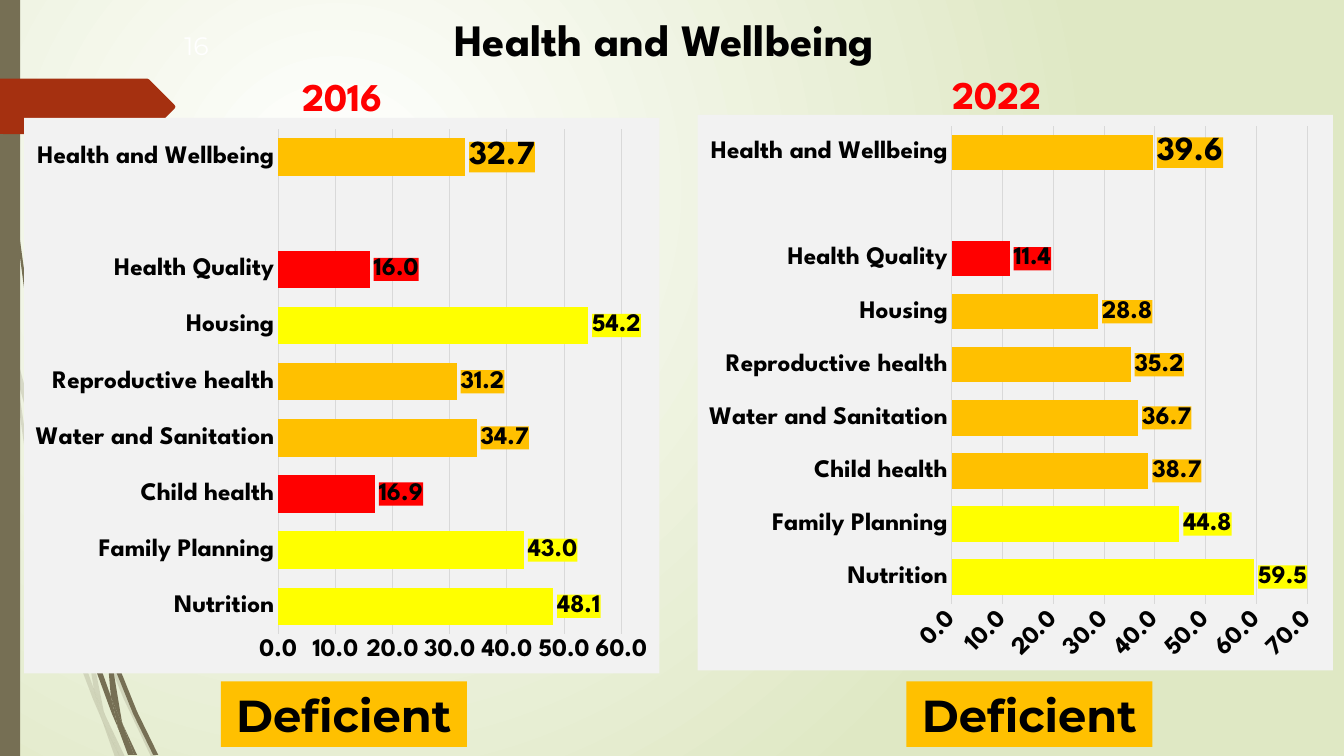
from dataclasses import dataclass

from lxml.etree import SubElement
from pptx import Presentation
from pptx.chart.data import CategoryChartData
from pptx.dml.color import RGBColor
from pptx.enum.chart import XL_CHART_TYPE, XL_LABEL_POSITION, XL_TICK_MARK
from pptx.enum.dml import MSO_FILL
from pptx.enum.shapes import MSO_SHAPE
from pptx.enum.text import MSO_ANCHOR, MSO_AUTO_SIZE, PP_ALIGN
from pptx.oxml import parse_xml
from pptx.oxml.ns import nsdecls, qn
from pptx.util import Inches, Pt


@dataclass(frozen=True)
class Theme:
    black: str = "000000"
    white: str = "FFFFFF"
    back: str = "DFE8C4"
    olive: str = "766F54"
    rust: str = "A53010"
    red: str = "FF0000"
    orange: str = "FFC000"
    yellow: str = "FFFF00"
    panel: str = "F2F2F2"
    grid: str = "D9D9D9"
    font: str = "League Spartan"
    verdict_font: str = "Montserrat"
    title: int = 32
    year: int = 28
    total: int = 24
    label: int = 18


@dataclass(frozen=True)
class Panel:
    year: str
    year_box: tuple
    left: float
    top: float
    verdict_left: float
    values: tuple
    axis_max: int
    plot: tuple  # x, y, width, height as shares of the chart
    rotation: int


T = Theme()
CATEGORIES = ("Nutrition", "Family Planning", "Child health", "Water and Sanitation",
              "Reproductive health", "Housing", "Health Quality", "", "Health and Wellbeing")
PANELS = (
    Panel("2016", (2.16, 0.68, 2.47, 0.54), 0.24, 1.17, 2.19,
          (48.1, 43.0, 16.9, 34.7, 31.2, 54.2, 16.0, None, 32.7),
          60, (0.4, 0.02, 0.54, 0.91), 0),
    Panel("2022", (8.81, 0.66, 2.16, 0.54), 6.92, 1.14, 8.99,
          (59.5, 44.8, 38.7, 36.7, 35.2, 28.8, 11.4, None, 39.6),
          70, (0.4, 0.02, 0.56, 0.86), -45),
)

# Outlines in hundredths of an inch
PALE_WISPS = (
    ((11, 350), (9, 322), (0, 282), (0, 299), (10, 344)),
    ((58, 522), (84, 599), (85, 586), (62, 520), (14, 345), (17, 376)),
    ((92, 607), (88, 596), (88, 610), (123, 694), (150, 751), (155, 751), (127, 692)),
    ((119, 751), (124, 751), (105, 711)),
    ((93, 683), (70, 619), (31, 469), (17, 376), (11, 350), (28, 470), (65, 621),
     (92, 693), (101, 714), (99, 707)),
    ((84, 599), (87, 646), (93, 683), (96, 692), (105, 711), (103, 706), (91, 646), (88, 608)),
    ((101, 714), (114, 751), (119, 751)),
    ((96, 692), (93, 683), (99, 707), (101, 714), (119, 751), (105, 711)),
)
DARK_WISPS = (
    ((7, 110), (17, 233), (33, 355), (56, 477), (57, 481), (55, 453), (36, 355),
     (19, 232), (8, 109), (4, 0), (3, 0), (4, 48)),
    ((113, 649), (110, 641), (111, 656), (132, 708), (152, 749), (157, 749), (136, 706)),
    ((110, 691), (98, 657), (72, 556), (64, 505), (57, 477), (68, 557), (93, 659),
     (111, 708), (117, 722), (116, 717)),
    ((133, 749), (136, 749), (122, 719)),
    ((117, 722), (127, 749), (131, 749)),
    ((106, 645), (110, 691), (116, 706), (122, 719), (121, 716), (111, 656), (109, 651)),
    ((116, 706), (110, 691), (116, 717), (117, 722), (130, 749), (133, 749), (122, 719)),
)
ARROW = ((0, 78), (146, 78), (148, 79), (173, 104), (174, 106), (173, 108),
         (148, 133), (146, 134), (0, 133))


def rgb(color: str) -> RGBColor:
    return RGBColor.from_string(color)


def solid_xml(tag: str, color: str):
    return parse_xml(f'<{tag} {nsdecls("c", "a")}><a:solidFill><a:srgbClr val="{color}"/>'
                     f'</a:solidFill><a:ln><a:noFill/></a:ln></{tag}>')


def style_font(font, size: int, color: str = T.black, name: str = T.font, bold: bool = True) -> None:
    font.size, font.name, font.bold = Pt(size), name, bold
    font.color.rgb = rgb(color)


def paint(sp, color: str) -> None:
    sp.shadow.inherit = False
    sp.fill.solid()
    sp.fill.fore_color.rgb = rgb(color)
    sp.line.fill.background()


def write(sp, text: str, size: int, **font) -> None:
    tf = sp.text_frame
    tf.text = text
    tf.word_wrap, tf.auto_size = True, MSO_AUTO_SIZE.NONE
    tf.vertical_anchor = MSO_ANCHOR.MIDDLE
    p = tf.paragraphs[0]
    p.alignment = PP_ALIGN.CENTER
    style_font(p.font, size, **font)


def add_outline(s, points: tuple, color: str, opacity: int = 100) -> None:
    builder = s.shapes.build_freeform(*points[0], scale=Inches(0.01))
    builder.add_line_segments(points[1:], close=True)
    sp = builder.convert_to_shape()
    paint(sp, color)
    if opacity < 100:
        clr = next(sp._element.spPr.iter(qn("a:srgbClr")))
        SubElement(clr, qn("a:alpha"), val=str(opacity * 1000))


def add_backdrop(s) -> None:
    fill = s.background.fill
    fill.gradient()
    for stop, color in zip(fill.gradient_stops, (T.white, T.back)):
        stop.color.rgb = rgb(color)
    lin = next(s._element.iter(qn("a:lin")))
    lin.getparent().replace(lin, parse_xml(
        f'<a:path {nsdecls("a")} path="circle">'
        '<a:fillToRect l="50000" t="50000" r="100000" b="100000"/></a:path>'))
    for wisp in PALE_WISPS:
        add_outline(s, wisp, T.olive, 20)
    for wisp in DARK_WISPS:
        add_outline(s, wisp, T.olive)
    paint(s.shapes.add_shape(MSO_SHAPE.RECTANGLE, 0, 0, Inches(0.2), Inches(7.5)), T.olive)
    add_outline(s, ARROW, T.rust)


def score_color(value: float) -> str:
    return T.red if value < 20 else T.orange if value < 40 else T.yellow


def style_axes(chart, panel: Panel) -> None:
    for axis in (chart.category_axis, chart.value_axis):
        axis.major_tick_mark = axis.minor_tick_mark = XL_TICK_MARK.NONE
        axis.format.line.fill.background()
        style_font(axis.tick_labels.font, T.label)
    chart.category_axis.has_major_gridlines = False
    axis = chart.value_axis
    axis.minimum_scale, axis.maximum_scale, axis.major_unit = 0, panel.axis_max, 10
    axis.tick_labels.number_format = "0.0"
    axis.tick_labels.number_format_is_linked = False
    line = axis.major_gridlines.format.line
    line.color.rgb, line.width = rgb(T.grid), Pt(0.75)
    next(axis._element.iter(qn("a:bodyPr"))).set("rot", str(panel.rotation * 60000))


def style_bars(series, values: tuple) -> None:
    """Colour each bar and the box behind its label by score."""
    for i, value in enumerate(values):
        if value is None:
            continue
        point, color = series.points[i], score_color(value)
        point.format.fill.solid()
        point.format.fill.fore_color.rgb = rgb(color)
        label = point.data_label
        style_font(label.font, T.total if i == len(values) - 1 else T.label)
        label.position = XL_LABEL_POSITION.OUTSIDE_END
    for label in series._element.iter(qn("c:dLbl")):
        value = values[int(label.find(qn("c:idx")).get("val"))]
        text = label.find(qn("c:txPr"))
        text.addprevious(parse_xml(
            f'<c:numFmt {nsdecls("c")} formatCode="0.0" sourceLinked="0"/>'))
        text.addprevious(solid_xml("c:spPr", score_color(value)))


def place_plot(chart, shares: tuple) -> None:
    area = chart._chartSpace.chart.plotArea
    for old in area.findall(qn("c:layout")):
        area.remove(old)
    sizes = "".join(f'<c:{k} val="{v}"/>' for k, v in zip("xywh", shares))
    area.insert(0, parse_xml(
        f'<c:layout {nsdecls("c")}><c:manualLayout><c:layoutTarget val="inner"/>'
        f'<c:xMode val="edge"/><c:yMode val="edge"/>{sizes}</c:manualLayout></c:layout>'))


def add_panel(s, panel: Panel) -> None:
    write(s.shapes.add_textbox(*map(Inches, panel.year_box)), panel.year, T.year, color=T.red)
    data = CategoryChartData(number_format="0.0")
    data.categories = CATEGORIES
    data.add_series("Series 1", panel.values)
    chart = s.shapes.add_chart(XL_CHART_TYPE.BAR_CLUSTERED, Inches(panel.left), Inches(panel.top),
                               Inches(6.3), Inches(5.51), data).chart
    chart.has_legend = chart.has_title = False
    style_font(chart.font, T.label)
    plot = chart.plots[0]
    plot.gap_width, plot.vary_by_categories = 50, False
    style_axes(chart, panel)
    style_bars(plot.series[0], panel.values)
    place_plot(chart, panel.plot)
    chart._chartSpace.chart.addnext(solid_xml("c:spPr", T.panel))
    verdict = s.shapes.add_shape(MSO_SHAPE.RECTANGLE, Inches(panel.verdict_left), Inches(6.76),
                                 Inches(2.44), Inches(0.65))
    paint(verdict, T.orange)
    write(verdict, "Deficient", T.title, name=T.verdict_font)


def main() -> None:
    prs = Presentation()
    prs.slide_width, prs.slide_height = Inches(13.33), Inches(7.5)
    s = prs.slides.add_slide(prs.slide_layouts[5])
    add_backdrop(s)
    title = s.shapes.title
    title.left, title.top, title.width, title.height = map(Inches, (3.79, 0, 5.6, 0.67 + 0.1))
    write(title, "Health and Wellbeing", T.title)
    number = s.shapes.add_textbox(Inches(1.55), Inches(0.25), Inches(0.8), Inches(0.4))
    write(number, "16", T.label, color=T.white, name=T.verdict_font, bold=False)
    for panel in PANELS:
        add_panel(s, panel)
    prs.save("out.pptx")


if __name__ == "__main__":
    main()
